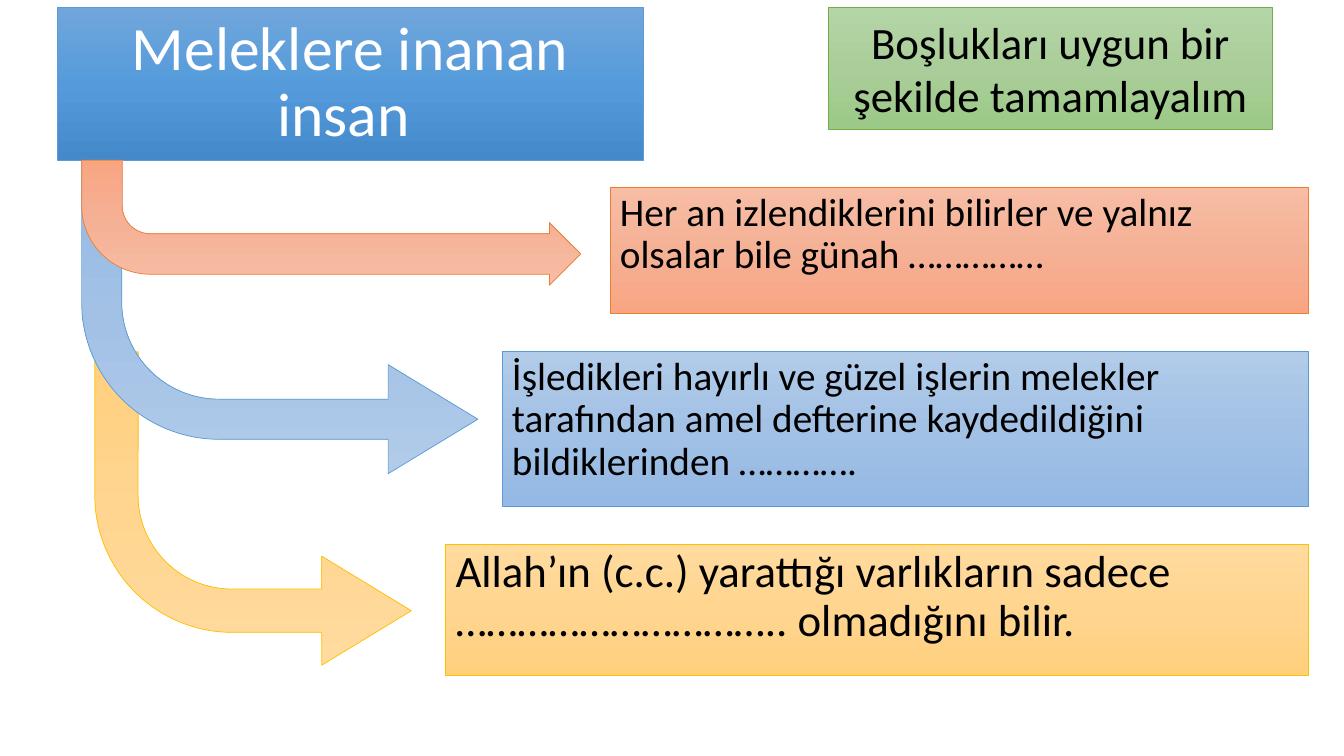
import copy
from dataclasses import dataclass

import pptx
import pptx.dml.color
import pptx.enum.shapes
import pptx.enum.text
import pptx.oxml.ns
import pptx.util

Inches = pptx.util.Inches
Pt = pptx.util.Pt
Color = pptx.dml.color.RGBColor
Kind = pptx.enum.shapes.MSO_SHAPE
Align = pptx.enum.text.PP_ALIGN
Anchor = pptx.enum.text.MSO_ANCHOR


@dataclass(frozen=True)
class Theme:
    font: str = "Calibri"
    head: int = 44
    large: int = 32
    body: int = 28
    edge: float = 0.5
    white: str = "FFFFFF"
    black: str = "000000"
    title: tuple = ("71A6DB", "559BDB", "448ACA", "5B9BD5")
    red: tuple = ("F7BDA5", "F5B196", "F8A582", "ED7D31")
    blue: tuple = ("B1CBE9", "A3C1E5", "93B9E4", "5B9BD5")
    gold: tuple = ("FFDB9E", "FFD590", "FFD07C", "FFC000")
    green: tuple = ("B5D5A7", "AACE9A", "9CC987", "70AD47")


THEME = Theme()


def paint(shape, tones):
    shape.shadow.inherit = False
    fill = shape.fill
    fill.gradient()
    fill.gradient_angle = 270
    first = shape._element.spPr.find(".//" + pptx.oxml.ns.qn("a:gs"))
    first.addnext(copy.deepcopy(first))
    for stop, tone, place in zip(fill.gradient_stops, tones, (0, 0.5, 1)):
        stop.color.rgb = Color.from_string(tone)
        stop.position = place
    shape.line.color.rgb = Color.from_string(tones[-1])
    shape.line.width = Pt(THEME.edge)


def add_shape(slide, kind, area, tones):
    shape = slide.shapes.add_shape(kind, *map(Inches, area))
    paint(shape, tones)
    return shape


def add_arrow(slide, area, tones, bends):
    arrow = add_shape(slide, Kind.BENT_ARROW, area, tones)
    for i, bend in enumerate(bends):
        arrow.adjustments[i] = bend
    arrow._element.spPr.xfrm.set("flipV", "1")


def add_box(slide, area, tones, text, size, ink=THEME.black,
            align=Align.LEFT, anchor=Anchor.TOP, lead=0.9, gap=0):
    frame = add_shape(slide, Kind.RECTANGLE, area, tones).text_frame
    frame.word_wrap = True
    frame.vertical_anchor = anchor
    para = frame.paragraphs[0]
    para.alignment = align
    para.line_spacing = lead
    para.space_before = Pt(gap)
    run = para.add_run()
    run.text = text
    run.font.name = THEME.font
    run.font.size = Pt(size)
    run.font.color.rgb = Color.from_string(ink)


def main():
    deck = pptx.Presentation()
    deck.slide_width = Inches(13.33)
    deck.slide_height = Inches(7.5)
    slide = deck.slides.add_slide(deck.slide_layouts[6])

    add_arrow(slide, (0.94, 3.49, 3.14, 3.11), THEME.gold,
              (0.138, 0.174, 0.286, 0.438))
    add_arrow(slide, (0.81, 1.59, 3.93, 3.11), THEME.blue,
              (0.128, 0.174, 0.286, 0.438))
    add_box(slide, (0.57, 0.07, 5.81, 1.52), THEME.title,
            "Meleklere inanan insan ", THEME.head, THEME.white,
            Align.CENTER, Anchor.MIDDLE)

    right = 12.98
    notes = (
        (4.98, 3.49, 1.53, THEME.blue, THEME.body,
         "İşledikleri hayırlı ve güzel işlerin melekler tarafından amel "
         "defterine kaydedildiğini bildiklerinden …………."),
        (4.42, 5.4, 1.3, THEME.gold, THEME.large,
         "Allah’ın (c.c.) yarattığı varlıkların sadece "
         "………………………….. olmadığını bilir."),
        (6.05, 1.86, 1.25, THEME.red, THEME.body,
         "Her an izlendiklerini bilirler ve yalnız olsalar bile "
         "günah ……………"),
    )
    for left, top, height, tones, size, text in notes:
        add_box(slide, (left, top, right - left, height), tones, text, size,
                gap=10)

    add_arrow(slide, (0.81, 1.59, 4.95, 1.24), THEME.red,
              (0.324, 0.25, 0.25, 0.549))
    add_box(slide, (8.22, 0.07, 4.4, 1.21), THEME.green,
            "Boşlukları uygun bir şekilde tamamlayalım", THEME.large,
            align=Align.CENTER, anchor=Anchor.MIDDLE, lead=1.0)
    deck.save("out.pptx")


if __name__ == "__main__":
    main()
